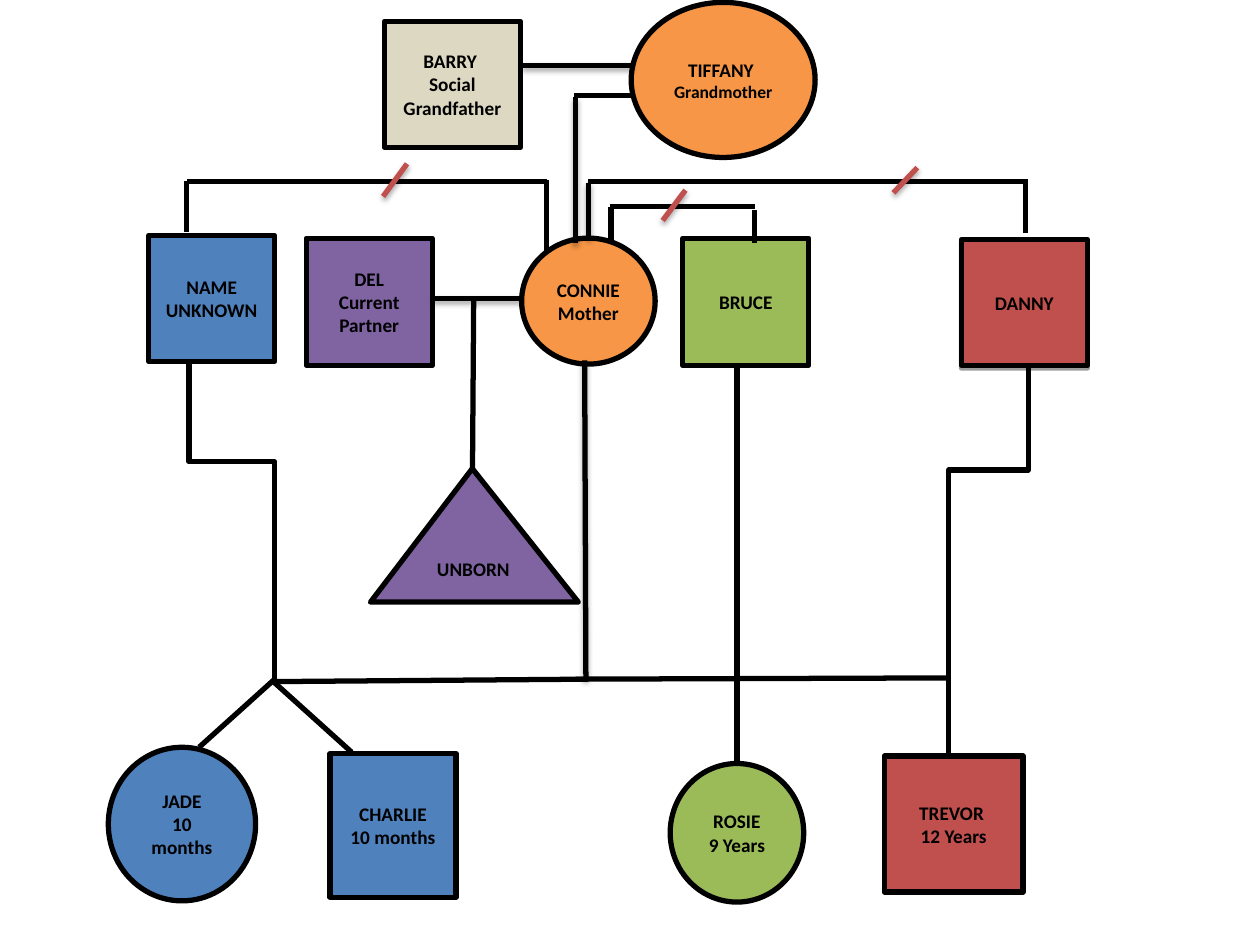
from dataclasses import dataclass
from typing import NamedTuple, Optional

from lxml import etree
from pptx import Presentation
from pptx.dml.color import RGBColor
from pptx.enum.shapes import MSO_CONNECTOR, MSO_SHAPE
from pptx.enum.text import MSO_ANCHOR, PP_ALIGN
from pptx.oxml.ns import qn
from pptx.util import Pt

SQUARE, CIRCLE = MSO_SHAPE.RECTANGLE, MSO_SHAPE.OVAL
TRIANGLE = MSO_SHAPE.ISOSCELES_TRIANGLE
STRAIGHT, ELBOW = MSO_CONNECTOR.STRAIGHT, MSO_CONNECTOR.ELBOW
MIDDLE, CENTER = MSO_ANCHOR.MIDDLE, PP_ALIGN.CENTER
QUARTER_TURN = "5400000"


@dataclass(frozen=True)
class Theme:
    font: str = "Calibri"
    text_size: float = 11
    small_size: float = 10
    line_width: float = 3
    ink: str = "000000"
    maternal: str = "F79646"
    grandfather: str = "DDD8C2"
    unknown_father: str = "4F81BD"
    current_partner: str = "8064A2"
    bruce: str = "9BBB59"
    danny: str = "C0504D"
    separation: str = "C0504D"


class Shadow(NamedTuple):
    blur: float
    distance: float
    opacity: int


class Person(NamedTuple):
    lines: tuple[str, ...]
    symbol: int
    color: str
    left: float
    top: float
    width: float
    height: float
    shadow: Optional[Shadow] = None
    last_line_size: Optional[float] = None


class Link(NamedTuple):
    x1: float
    y1: float
    x2: float
    y2: float
    shadow: Optional[Shadow] = None
    color: str = Theme.ink


THEME = Theme()
SOFT = Shadow(3.1, 1.8, 35)
HARD = Shadow(0, 1.6, 38)

PEOPLE = (
    Person(("UNBORN",), TRIANGLE, THEME.current_partner, 211.7, 267.8, 118.8, 76.3),
    Person(("TIFFANY ", "Grandmother"), CIRCLE, THEME.maternal, 360.7, 1.4, 105.1, 88.6,
           last_line_size=THEME.small_size),
    Person(("BARRY ", "Social Grandfather"), SQUARE, THEME.grandfather,
           219.6, 12.2, 77.8, 72),
    Person(("CONNIE", "Mother"), CIRCLE, THEME.maternal, 298.1, 136.1, 76.3, 72),
    Person(("DANNY",), SQUARE, THEME.danny, 549.4, 136.8, 72, 72, shadow=HARD),
    Person(("BRUCE",), SQUARE, THEME.bruce, 390.2, 136.1, 72, 72.7),
    Person(("NAME UNKNOWN",), SQUARE, THEME.unknown_father, 85, 134.6, 72, 72),
    Person(("DEL", "Current Partner"), SQUARE, THEME.current_partner,
           175, 136.1, 72, 72.7),
    Person(("JADE", "10 months"), CIRCLE, THEME.unknown_father, 61.9, 427, 84.2, 87.8),
    Person(("CHARLIE", "10 months"), SQUARE, THEME.unknown_father,
           188.6, 430.6, 72, 82.1),
    Person(("TREVOR ", "12 Years"), SQUARE, THEME.danny, 505.4, 432, 79.2, 77.8),
    Person(("ROSIE", "9 Years"), CIRCLE, THEME.bruce, 383, 436.3, 76.3, 79.2),
)

GRANDPARENT_LINKS = (
    Link(298.8, 37.4, 361.4, 37.4, SOFT),
    Link(328.3, 54.7, 361.4, 54.7),
    Link(329, 139, 329, 55.4, SOFT),
)
PARTNER_LINKS = (
    # Unknown father and Connie
    Link(106.6, 132.5, 106.6, 103.7),
    Link(312.5, 103.7, 106.6, 103.7),
    Link(312.5, 143.3, 312.5, 103),
    # Danny and Connie
    Link(336.2, 136.1, 336.2, 104.4, SOFT),
    Link(336.2, 103.7, 587.5, 103.7),
    Link(586.1, 104.4, 586.1, 133.2),
    # Bruce and Connie
    Link(349.2, 118.1, 349.2, 139),
    Link(348.5, 118.1, 431.3, 118.1),
    Link(431.3, 120.2, 431.3, 139),
    # Del and Connie
    Link(247, 170.6, 298.1, 170.6, SOFT),
)
CHILD_LINKS = (
    Link(270.7, 170.6, 270, 267.8),
    Link(334.1, 205.9, 334.8, 388.1, SOFT),
    Link(157, 389.5, 336.2, 388.1),
    Link(329, 388.1, 540.7, 387.4),
    Link(157, 319, 157, 391),
    Link(156.2, 389.5, 200.9, 429.8),
    Link(157, 388.1, 113.8, 427),
    Link(421.2, 321.1, 421.2, 210.2),
    Link(421.2, 321.1, 421.2, 434.9),
    Link(542.2, 322.6, 542.2, 430.6),
)
SEPARATIONS = (
    Link(524.2, 95.8, 510.5, 110.2, SOFT, THEME.separation),
    Link(391.7, 108.7, 378.7, 126, SOFT, THEME.separation),
    Link(232.6, 93.6, 218.9, 112.3, SOFT, THEME.separation),
)
STEPPED_LINKS = (
    Link(108, 208.1, 157, 319.7),
    Link(587.5, 210.2, 542.2, 326.9),
)


def set_shadow(properties, shadow: Optional[Shadow]) -> None:
    """Give a shape's properties a downward shadow, or an empty effect list."""
    effects = etree.SubElement(properties, qn("a:effectLst"))
    if shadow:
        outer = etree.SubElement(
            effects, qn("a:outerShdw"), blurRad=str(Pt(shadow.blur)),
            dist=str(Pt(shadow.distance)), dir=QUARTER_TURN, rotWithShape="0")
        tint = etree.SubElement(outer, qn("a:srgbClr"), val=THEME.ink)
        etree.SubElement(tint, qn("a:alpha"), val=str(shadow.opacity * 1000))


def draw_person(slide, person: Person) -> None:
    symbol = slide.shapes.add_shape(
        person.symbol, Pt(person.left), Pt(person.top),
        Pt(person.width), Pt(person.height))
    if person.symbol == TRIANGLE:
        symbol.adjustments[0] = 0.49
    symbol.fill.solid()
    symbol.fill.fore_color.rgb = RGBColor.from_string(person.color)
    symbol.line.color.rgb = RGBColor.from_string(THEME.ink)
    symbol.line.width = Pt(THEME.line_width)
    set_shadow(symbol._element.spPr, person.shadow)

    label = symbol.text_frame
    label.word_wrap = True
    label.vertical_anchor = MIDDLE
    label.text = "\n".join(person.lines)
    for paragraph in label.paragraphs:
        paragraph.alignment = CENTER
        paragraph.font.name = THEME.font
        paragraph.font.size = Pt(THEME.text_size)
        paragraph.font.bold = True
        paragraph.font.color.rgb = RGBColor.from_string(THEME.ink)
    if person.last_line_size:
        label.paragraphs[-1].font.size = Pt(person.last_line_size)


def draw_link(slide, link: Link, kind: int = STRAIGHT):
    connector = slide.shapes.add_connector(
        kind, Pt(link.x1), Pt(link.y1), Pt(link.x2), Pt(link.y2))
    connector.line.color.rgb = RGBColor.from_string(link.color)
    connector.line.width = Pt(THEME.line_width)
    set_shadow(connector._element.spPr, link.shadow)
    return connector


def draw_stepped_link(slide, link: Link) -> None:
    """Draw an elbow that leaves downwards: a sideways elbow turned by 90 degrees."""
    center_x, center_y = (link.x1 + link.x2) / 2, (link.y1 + link.y2) / 2
    half_run, half_drop = (link.x2 - link.x1) / 2, (link.y2 - link.y1) / 2
    sideways = Link(center_x - half_drop, center_y + half_run,
                    center_x + half_drop, center_y - half_run)
    connector = draw_link(slide, sideways, ELBOW)
    connector._element.spPr.find(qn("a:xfrm")).set("rot", QUARTER_TURN)


def main() -> None:
    presentation = Presentation()
    presentation.slide_width, presentation.slide_height = Pt(720), Pt(540)
    slide = presentation.slides.add_slide(presentation.slide_layouts[6])
    for person in PEOPLE:
        draw_person(slide, person)
    for link in STEPPED_LINKS:
        draw_stepped_link(slide, link)
    for link in GRANDPARENT_LINKS + PARTNER_LINKS + CHILD_LINKS + SEPARATIONS:
        draw_link(slide, link)
    presentation.save("out.pptx")


if __name__ == "__main__":
    main()
